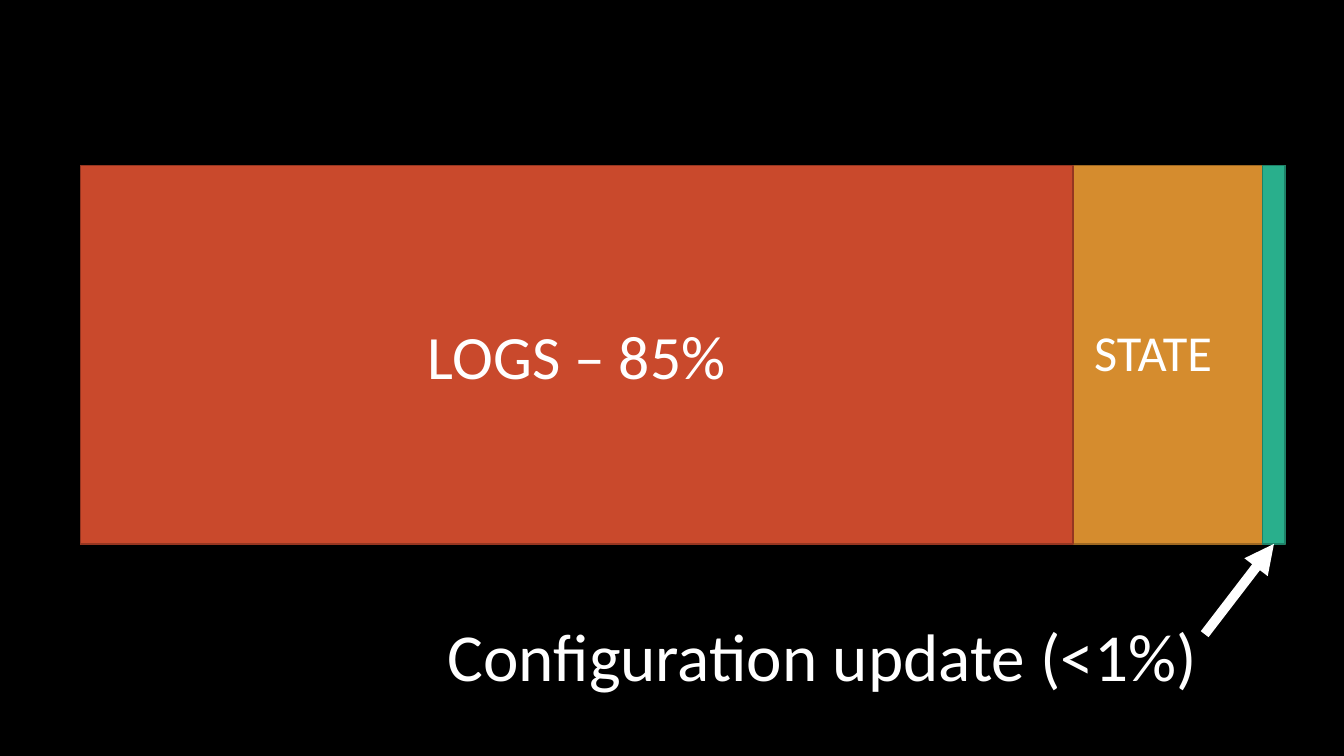
import pptx
import pptx.util
import pptx.dml.color
import pptx.enum.shapes
import pptx.enum.text
import pptx.oxml

Pt = pptx.util.Pt
ALIGN = pptx.enum.text.PP_ALIGN


def paint(color, hue):
    color.rgb = pptx.dml.color.RGBColor.from_string(hue)


def write(shape, text, size, align=ALIGN.LEFT, anchor=pptx.enum.text.MSO_ANCHOR.TOP):
    frame = shape.text_frame
    frame.word_wrap = True
    frame.vertical_anchor = anchor
    para = frame.paragraphs[0]
    para.alignment = align
    run = para.add_run()
    run.text = text
    run.font.size = Pt(size)
    run.font.name = "Calibri"
    paint(run.font.color, "FFFFFF")


deck = pptx.Presentation()
deck.slide_width, deck.slide_height = Pt(960), Pt(540)
slide = deck.slides.add_slide(deck.slide_layouts[6])
slide.background.fill.solid()
paint(slide.background.fill.fore_color, "000000")

# Stacked bar: the full length is state, with updates and logs laid over its ends
left, top, width, height = 57.5, 118, 860.5, 270.5
right = left + width
thin = 16
bars = [
    (left, width, "D58C2E", "9E6822", ""),
    (right - thin, thin, "29AF8C", "1E8168", ""),
    (left, 709, "C9492C", "953621", "LOGS – 85%"),
]
for start, span, fill, edge, label in bars:
    bar = slide.shapes.add_shape(
        pptx.enum.shapes.MSO_SHAPE.RECTANGLE, Pt(start), Pt(top), Pt(span), Pt(height))
    bar.shadow.inherit = False
    bar.fill.solid()
    paint(bar.fill.fore_color, fill)
    paint(bar.line.color, edge)
    bar.line.width = Pt(1)
    if label:
        write(bar, label, 44, ALIGN.CENTER, pptx.enum.text.MSO_ANCHOR.MIDDLE)

labels = [
    ("STATE", 36, 774.5, 226, 105, 51),
    ("Configuration update (<1%)", 48, 312.5, 435, 612, 65.5),
]
for text, size, *place in labels:
    box = slide.shapes.add_textbox(*map(Pt, place))
    write(box, text, size)

# Arrow from the update label to the foot of the thin bar
arrow = slide.shapes.add_connector(
    pptx.enum.shapes.MSO_CONNECTOR.STRAIGHT,
    Pt(860.5), Pt(453), Pt(right - thin / 2), Pt(top + height))
paint(arrow.line.color, "FFFFFF")
arrow.line.width = Pt(7)
space = 'xmlns:a="http://schemas.openxmlformats.org/drawingml/2006/main"'
arrow.line._get_or_add_ln().append(
    pptx.oxml.parse_xml(f'<a:tailEnd {space} type="triangle"/>'))
arrow._element.spPr.append(pptx.oxml.parse_xml(f"<a:effectLst {space}/>"))

deck.save("out.pptx")
